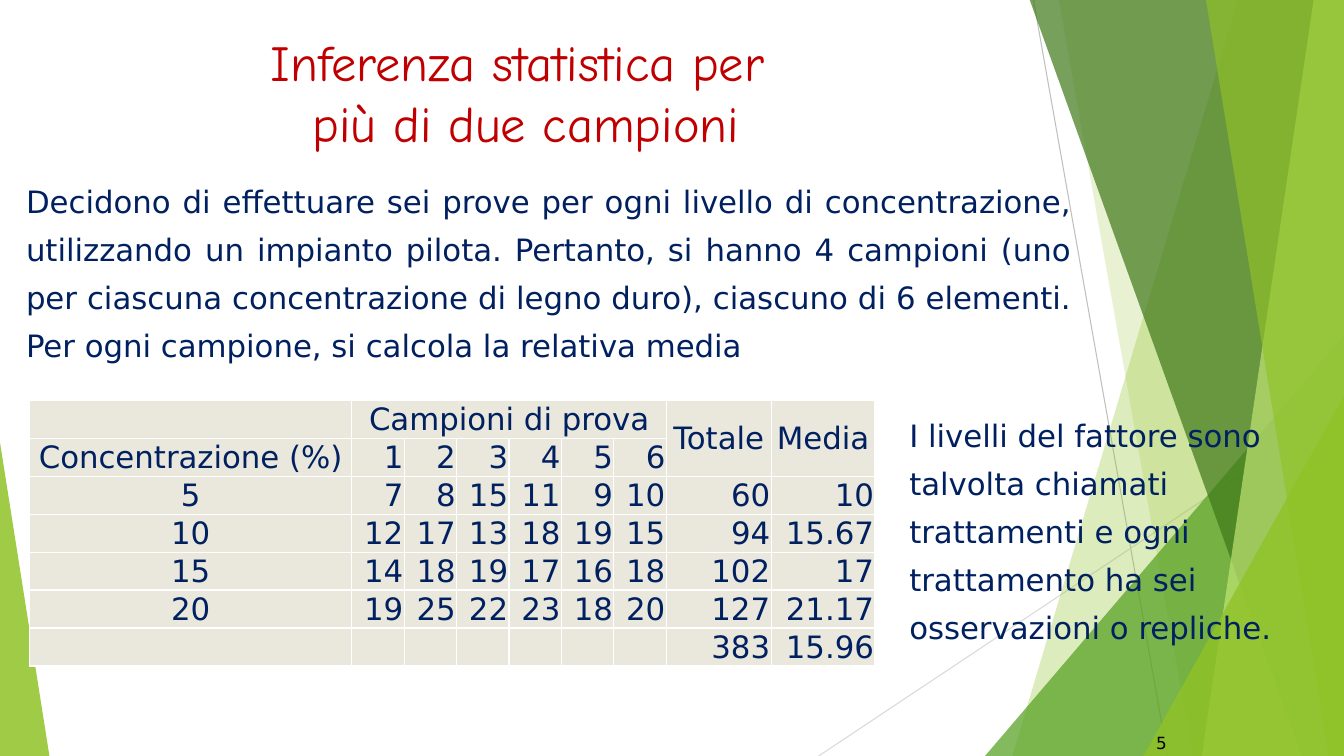
"""Build a slide on comparing more than two samples, with a table of trials."""
from lxml import etree
from pptx import Presentation
from pptx.dml.color import RGBColor
from pptx.enum.shapes import MSO_CONNECTOR, MSO_SHAPE
from pptx.enum.text import MSO_ANCHOR, MSO_AUTO_SIZE, PP_ALIGN
from pptx.oxml import parse_xml
from pptx.oxml.ns import nsdecls, qn
from pptx.util import Inches, Pt

LEFT, CENTER, RIGHT, JUSTIFY = PP_ALIGN.LEFT, PP_ALIGN.CENTER, PP_ALIGN.RIGHT, PP_ALIGN.JUSTIFY
MIDDLE, BOTTOM = MSO_ANCHOR.MIDDLE, MSO_ANCHOR.BOTTOM
GROW, FIXED = MSO_AUTO_SIZE.SHAPE_TO_FIT_TEXT, MSO_AUTO_SIZE.NONE
STRAIGHT, TRIANGLE = MSO_CONNECTOR.STRAIGHT, MSO_SHAPE.ISOSCELES_TRIANGLE

NAVY = RGBColor(0x00, 0x20, 0x60)
RED = RGBColor(0xC0, 0x00, 0x00)
BLACK = RGBColor(0x00, 0x00, 0x00)
BEIGE = RGBColor(0xEA, 0xE8, 0xDC)
GREEN = RGBColor(0x90, 0xC2, 0x26)
MID_GREEN = RGBColor(0x54, 0xA0, 0x21)
DARK_GREEN = RGBColor(0x3F, 0x78, 0x19)
LIME = RGBColor(0xC0, 0xE4, 0x74)
GRAY = RGBColor(0xBF, 0xBF, 0xBF)
LIGHT_GRAY = RGBColor(0xD9, 0xD9, 0xD9)

WIDTH, HEIGHT = 13.33, 7.5


def write(frame, text, size=22, color=NAVY, font="DejaVu Sans", align=LEFT, spacing=None, after=0):
    for index, line in enumerate(text.split("\n")):
        paragraph = frame.add_paragraph() if index else frame.paragraphs[0]
        paragraph.alignment = align
        paragraph.line_spacing = spacing
        paragraph.space_after = Pt(after)
        run = paragraph.add_run()
        run.text = line
        run.font.size = Pt(size)
        run.font.name = font
        run.font.color.rgb = color


def paint(shape, color, opacity):
    shape.shadow.inherit = False
    shape.line.fill.background()
    shape.fill.solid()
    shape.fill.fore_color.rgb = color
    tint = shape.fill._xPr.find(f".//{qn('a:srgbClr')}")
    etree.SubElement(tint, qn("a:alpha"), val=str(opacity * 1000))


prs = Presentation()
prs.slide_width, prs.slide_height = Inches(WIDTH), Inches(HEIGHT)
slide = prs.slides.add_slide(prs.slide_layouts[6])
shapes = slide.shapes

for x1, y1, x2, y2, color in [
    (10.25, 0, 11.58, HEIGHT, GRAY),
    (WIDTH, 4.03, 8.12, HEIGHT, LIGHT_GRAY),
]:
    ray = shapes.add_connector(STRAIGHT, Inches(x1), Inches(y1), Inches(x2), Inches(y2))
    ray.line.color.rgb = color
    ray.line.width = Pt(0.75)
    etree.SubElement(ray._element.spPr, qn("a:effectLst"))

facets = [
    ("band", (12.28, 10.04), GREEN, 30),
    ("band", (10.5, 11.83), GREEN, 20),
    ("triangle", (9.77, 3.33, 3.56, 4.17, 1), MID_GREEN, 72),
    ("band", (10.21, 12.91), DARK_GREEN, 70),
    ("band", (13.03, 11.92), LIME, 70),
    ("band", (11.96, 13.18), GREEN, 65),
    ("triangle", (11.34, 3.93, 1.99, 3.57, 1), GREEN, 80),
    ("triangle", (0, 4.39, 0.49, 3.11, 0), GREEN, 85),
]
for kind, geometry, color, opacity in facets:
    if kind == "band":
        top_x, bottom_x = geometry
        outline = shapes.build_freeform(Inches(top_x), Inches(-0.01))
        corners = [(WIDTH, -0.01), (WIDTH, HEIGHT), (bottom_x, HEIGHT)]
        outline.add_line_segments([(Inches(x), Inches(y)) for x, y in corners], close=True)
        facet = outline.convert_to_shape()
    else:
        *place, apex = geometry
        facet = shapes.add_shape(TRIANGLE, *map(Inches, place))
        facet.adjustments[0] = apex
    paint(facet, color, opacity)

passages = [
    ((10.84, 7.22, 0.83, 0.28), FIXED, "5", dict(size=12, color=BLACK, align=RIGHT)),
    ((0.16, 1.65, 10.56, 1.97), GROW,
     "Decidono di effettuare sei prove per ogni livello di concentrazione, utilizzando un "
     "impianto pilota. Pertanto, si hanno 4 campioni (uno per ciascuna concentrazione di legno "
     "duro), ciascuno di 6 elementi. Per ogni campione, si calcola la relativa media",
     dict(align=JUSTIFY, spacing=1.3, after=6)),
    ((0.29, 0.26, 9.85, 1.31), GROW, "Inferenza statistica per \npiù di due campioni",
     dict(size=36, color=RED, font="Comic Neue", align=CENTER)),
    ((8.92, 3.97, 4.22, 2.45), GROW,
     "I livelli del fattore sono talvolta chiamati trattamenti e ogni trattamento ha sei "
     "osservazioni o repliche.", dict(spacing=1.3, after=6)),
]
for place, sizing, text, style in passages:
    frame = shapes.add_textbox(*map(Inches, place)).text_frame
    frame.word_wrap = True
    frame.auto_size = sizing
    write(frame, text, **style)

trials = [
    ["", "Campioni di prova", "", "", "", "", "", "Totale", "Media"],
    ["Concentrazione (%)", "1", "2", "3", "4", "5", "6", "", ""],
    ["5", "7", "8", "15", "11", "9", "10", "60", "10"],
    ["10", "12", "17", "13", "18", "19", "15", "94", "15.67"],
    ["15", "14", "18", "19", "17", "16", "18", "102", "17"],
    ["20", "19", "25", "22", "23", "18", "20", "127", "21.17"],
    ["", "", "", "", "", "", "", "383", "15.96"],
]
column_widths = [3.2] + [0.52] * 6 + [1.04, 1.03]
table = shapes.add_table(len(trials), len(column_widths), Inches(0.29), Inches(3.97),
                         Inches(8.37), Inches(2.64)).table
table.first_row = table.horz_banding = False
for column, width in zip(table.columns, column_widths):
    column.width = Inches(width)
table.cell(0, 1).merge(table.cell(0, 6))
for summary in (7, 8):
    table.cell(0, summary).merge(table.cell(1, summary))

for r, row in enumerate(trials):
    for c, text in enumerate(row):
        cell = table.cell(r, c)
        cell.margin_left = cell.margin_right = cell.margin_top = Inches(0.01)
        cell.margin_bottom = 0
        cell.vertical_anchor = MIDDLE if r == 0 and c > 6 else BOTTOM
        for side in "LRTB":
            cell._tc.get_or_add_tcPr().append(parse_xml(
                f'<a:ln{side} w="12700" {nsdecls("a")}><a:solidFill>'
                f'<a:srgbClr val="FFFFFF"/></a:solidFill></a:ln{side}>'))
        cell.fill.solid()
        cell.fill.fore_color.rgb = BEIGE
        if text:
            write(cell.text_frame, text, align=CENTER if r == 0 or c == 0 else RIGHT)

prs.save("out.pptx")
